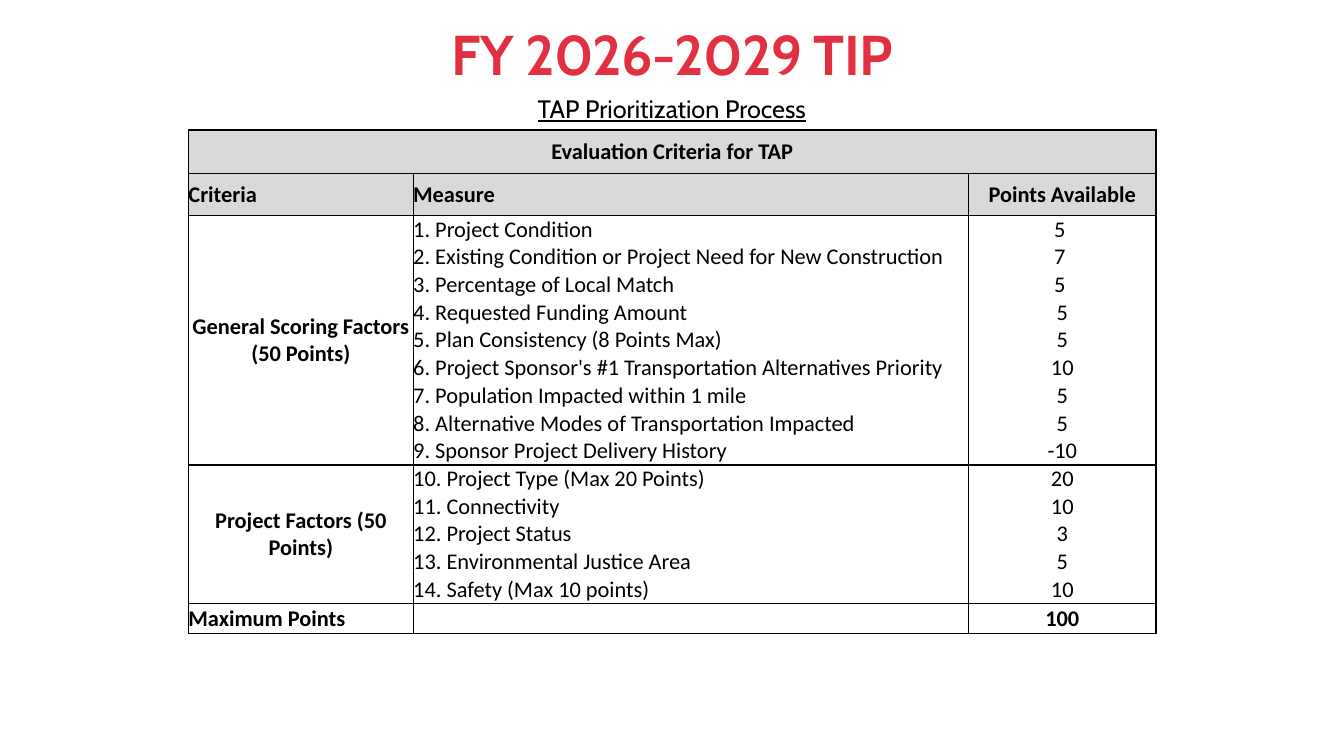
import dataclasses

import lxml.etree
import pptx
import pptx.dml.color
import pptx.enum.text
import pptx.oxml.ns
import pptx.util

PX = 4572  # EMU per px, 200 px to the inch
ALIGN = pptx.enum.text.PP_ALIGN
ANCHOR = pptx.enum.text.MSO_ANCHOR


@dataclasses.dataclass(frozen=True)
class Theme:
    red: str = "E23042"
    black: str = "000000"
    white: str = "FFFFFF"
    header: str = "D9D9D9"
    heading_font: str = "Cabin"
    table_font: str = "Calibri"
    title_size: int = 40
    subtitle_size: int = 18
    table_size: int = 16
    border: int = 1


THEME = Theme()

COLUMNS = (446, 520, 366, 216, 372)
POINTS = len(COLUMNS) - 1
TITLE_ROW, HEADER_ROW, MEASURE_ROW, TOTAL_ROW = 86, 84, 55, 60
GROUPS = (
    ("General Scoring Factors (50 Points)", (
        ("1. Project Condition", "5 "),
        ("2. Existing Condition or Project Need for New Construction", "7 "),
        ("3. Percentage of Local Match", "5 "),
        ("4. Requested Funding Amount", "5"),
        ("5. Plan Consistency (8 Points Max)", "5"),
        ("6. Project Sponsor's #1 Transportation Alternatives Priority", "10"),
        ("7. Population Impacted within 1 mile", "5"),
        ("8. Alternative Modes of Transportation Impacted", "5"),
        ("9. Sponsor Project Delivery History", "-10"),
    )),
    ("Project Factors (50 Points)", (
        ("10. Project Type (Max 20 Points)", "20"),
        ("11. Connectivity", "10"),
        ("12. Project Status", "3"),
        ("13. Environmental Justice Area", "5"),
        ("14. Safety (Max 10 points)", "10"),
    )),
)


def rgb(value):
    return pptx.dml.color.RGBColor.from_string(value)


def style(p, font, size, color, bold=False, align=ALIGN.CENTER):
    p.alignment = align
    p.font.name = font
    p.font.size = pptx.util.Pt(size)
    p.font.bold = bold
    p.font.color.rgb = rgb(color)


def add_heading(s, text, box, size, color, bold=False):
    """Add a centred line of text in the heading font; return its paragraph."""
    sp = s.shapes.add_textbox(*(v * PX for v in box))
    tf = sp.text_frame
    tf.word_wrap = True
    p = tf.paragraphs[0]
    p.add_run().text = text
    style(p, THEME.heading_font, size, color, bold)
    return p


def set_borders(cell, sides):
    """Draw the named sides (from L, R, T, B) and clear the others."""
    tc_pr = cell._tc.get_or_add_tcPr()
    qn = pptx.oxml.ns.qn
    for i, side in enumerate("LRTB"):
        ln = lxml.etree.Element(qn(f"a:ln{side}"))
        if side in sides:
            ln.set("w", str(pptx.util.Pt(THEME.border)))
            fill = lxml.etree.SubElement(ln, qn("a:solidFill"))
            lxml.etree.SubElement(fill, qn("a:srgbClr"), val=THEME.black)
        else:
            lxml.etree.SubElement(ln, qn("a:noFill"))
        tc_pr.insert(i, ln)


def fill_cell(cell, text, bold=True, align=ALIGN.CENTER, fill=THEME.white, sides="LRTB"):
    cell.margin_left = cell.margin_right = cell.margin_top = cell.margin_bottom = 0
    cell.vertical_anchor = ANCHOR.MIDDLE
    cell.fill.solid()
    cell.fill.fore_color.rgb = rgb(fill)
    set_borders(cell, sides)
    p = cell.text_frame.paragraphs[0]
    if text:
        p.add_run().text = text
    style(p, THEME.table_font, THEME.table_size, THEME.black, bold, align)


def fill_open_row(table, row, criteria, measure, points, fill=THEME.white):
    """Fill a row whose three middle cells stay apart but show no line between."""
    fill_cell(table.cell(row, 0), criteria, align=ALIGN.LEFT, fill=fill)
    for col, text, sides in ((1, measure, "LTB"), (2, "", "TB"), (3, "", "RTB")):
        fill_cell(table.cell(row, col), text, align=ALIGN.LEFT, fill=fill, sides=sides)
    fill_cell(table.cell(row, POINTS), points, fill=fill)


def fill_group(table, top, name, measures):
    """Fill one scoring group, its name merged down the first column."""
    last = top + len(measures) - 1
    for row, (measure, points) in enumerate(measures, top):
        sides = "LR" + "T" * (row == top) + "B" * (row == last)
        fill_cell(table.cell(row, 0), name if row == top else "")
        for col in range(1, POINTS):
            fill_cell(table.cell(row, col), measure if col == 1 else "", False,
                      ALIGN.LEFT, sides=sides)
        table.cell(row, 1).merge(table.cell(row, POINTS - 1))
        fill_cell(table.cell(row, POINTS), points, False, sides=sides)
    table.cell(top, 0).merge(table.cell(last, 0))
    return last + 1


def add_criteria_table(s, left, top):
    count = sum(len(measures) for _, measures in GROUPS)
    heights = (TITLE_ROW, HEADER_ROW, *[MEASURE_ROW] * count, TOTAL_ROW)
    table = s.shapes.add_table(len(heights), len(COLUMNS), left * PX, top * PX,
                               sum(COLUMNS) * PX, sum(heights) * PX).table
    table.first_row = table.horz_banding = False
    for column, width in zip(table.columns, COLUMNS):
        column.width = width * PX
    for row, height in zip(table.rows, heights):
        row.height = height * PX

    for col in range(len(COLUMNS)):
        fill_cell(table.cell(0, col), "" if col else "Evaluation Criteria for TAP",
                  fill=THEME.header)
    table.cell(0, 0).merge(table.cell(0, POINTS))
    fill_open_row(table, 1, "Criteria", "Measure", "Points Available", THEME.header)
    row = 2
    for name, measures in GROUPS:
        row = fill_group(table, row, name, measures)
    fill_open_row(table, row, "Maximum Points", "", "100")


def main():
    prs = pptx.Presentation()
    prs.slide_width, prs.slide_height = 2667 * PX, 1500 * PX
    s = prs.slides.add_slide(prs.slide_layouts[6])

    title = add_heading(s, "FY 2026-2029 TIP", (334, 29, 2000, 156),
                        THEME.title_size, THEME.red, bold=True)
    title.runs[0]._r.get_or_add_rPr().set("spc", "-50")
    subtitle = add_heading(s, "TAP Prioritization Process", (480, 182, 1706, 76),
                           THEME.subtitle_size, THEME.black)
    subtitle.font.underline = True
    subtitle.line_spacing = 0.9
    add_criteria_table(s, 374, 258)
    prs.save("out.pptx")


if __name__ == "__main__":
    main()
